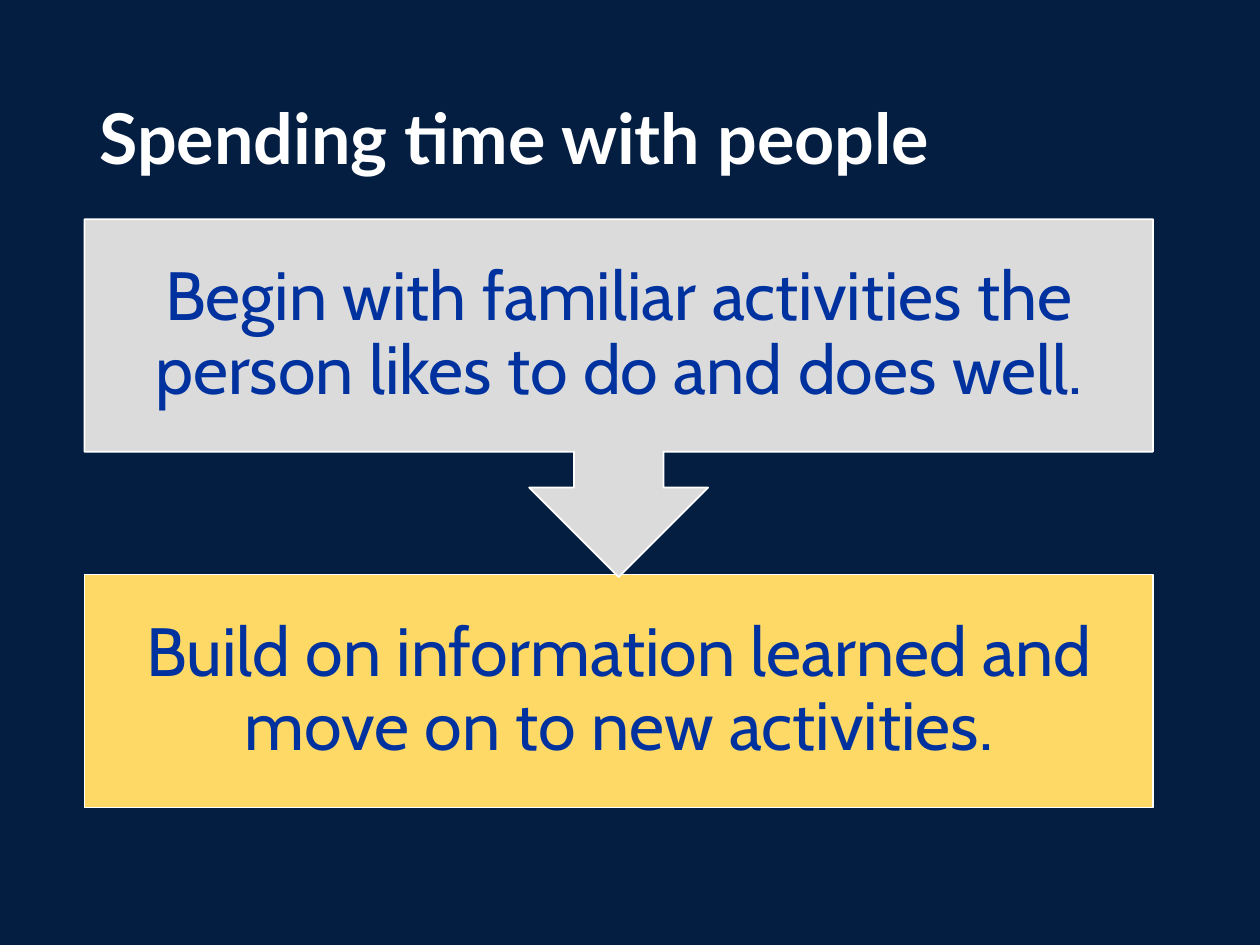
from pptx import Presentation
from pptx.dml.color import RGBColor
from pptx.enum.shapes import MSO_SHAPE as Shape
from pptx.enum.text import MSO_ANCHOR as Anchor, PP_ALIGN as Align
from pptx.util import Inches, Pt

# Content: steps from back to front, as (text, outline, top, height, fill)
TITLE = "Spending time with people"
STEPS = [
    ("Build on information learned and move on to new activities.",
     Shape.RECTANGLE, 4.56, 1.85, "yellow"),
    ("Begin with familiar activities the person likes to do and does well.",
     Shape.DOWN_ARROW_CALLOUT, 1.74, 2.84, "grey"),
]
STEP_LEFT, STEP_WIDTH, STEP_INSET = 0.67, 8.48, 0.3

THEME = {
    "navy": RGBColor(0x04, 0x1E, 0x42),
    "white": RGBColor(0xFF, 0xFF, 0xFF),
    "yellow": RGBColor(0xFF, 0xD9, 0x66),
    "grey": RGBColor(0xDB, 0xDB, 0xDB),
    "blue": RGBColor(0x00, 0x32, 0x9F),
    "title_font": "Lato",
    "step_font": "Cabin",
    "title_size": Pt(40),
    "step_size": Pt(39),
}


def write(frame, text, role, color, align, bold):
    frame.text = text
    frame.word_wrap = True
    frame.vertical_anchor = Anchor.MIDDLE
    paragraph = frame.paragraphs[0]
    paragraph.alignment = align
    paragraph.line_spacing = 0.9
    font = paragraph.font
    font.name = THEME[f"{role}_font"]
    font.size = THEME[f"{role}_size"]
    font.color.rgb = THEME[color]
    font.bold = bold


def add_step(slide, text, outline, top, height, fill):
    step = slide.shapes.add_shape(outline, Inches(STEP_LEFT), Inches(top),
                                  Inches(STEP_WIDTH), Inches(height))
    step.shadow.inherit = False
    step.fill.solid()
    step.fill.fore_color.rgb = THEME[fill]
    step.line.color.rgb = THEME["white"]
    step.line.width = Pt(1)
    frame = step.text_frame
    frame.margin_left = frame.margin_right = Inches(STEP_INSET)
    frame.margin_top = frame.margin_bottom = Inches(STEP_INSET)
    write(frame, text, "step", "blue", Align.CENTER, False)


def main():
    deck = Presentation()
    deck.slide_width, deck.slide_height = Inches(10), Inches(7.5)
    slide = deck.slides.add_slide(deck.slide_layouts[5])
    slide.background.fill.solid()
    slide.background.fill.fore_color.rgb = THEME["navy"]

    # Title
    title = slide.shapes.title
    title.left, title.top = Inches(0.69), Inches(0.4)
    title.width, title.height = Inches(8.62), Inches(1.45)
    write(title.text_frame, TITLE, "title", "white", Align.LEFT, True)

    # Steps, the arrow of the first overlapping the second
    for step in STEPS:
        add_step(slide, *step)

    deck.save("out.pptx")


if __name__ == "__main__":
    main()
